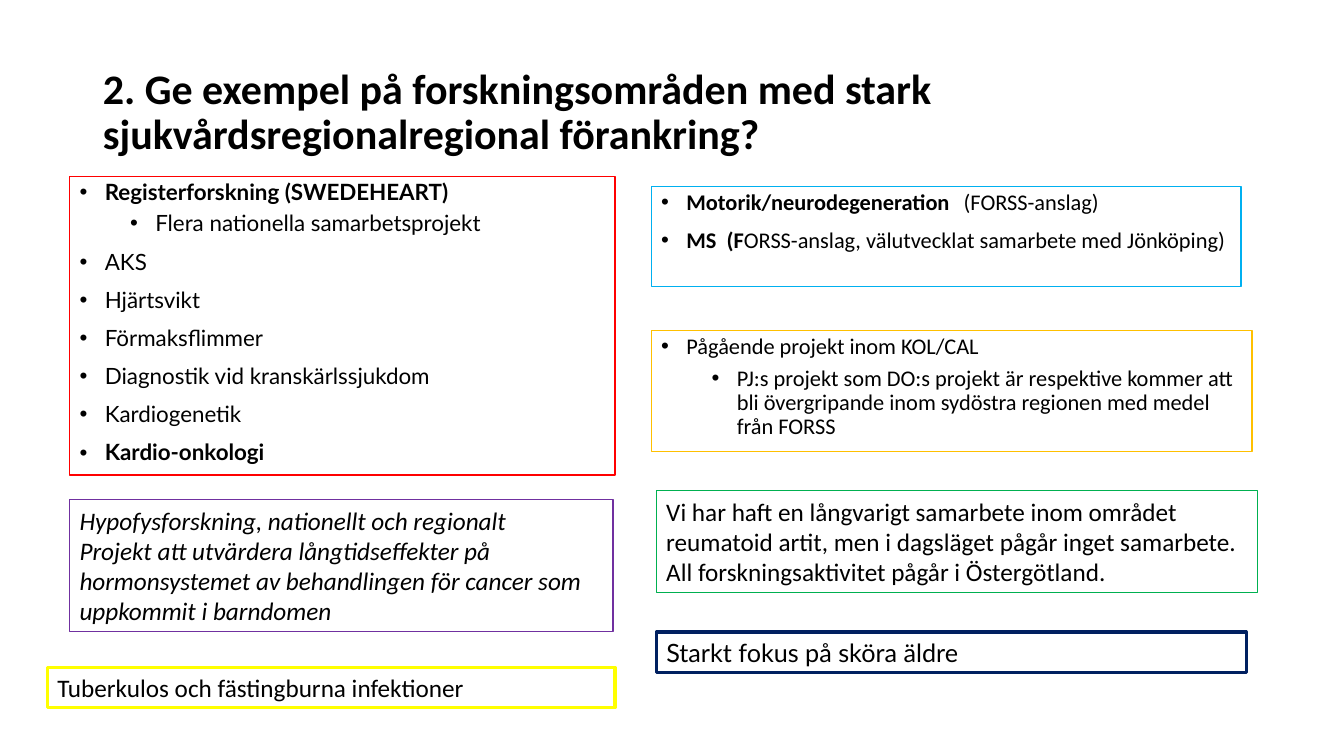
from lxml import etree
from pptx import Presentation
from pptx.dml.color import RGBColor
from pptx.enum.text import MSO_ANCHOR, MSO_AUTO_SIZE, PP_ALIGN
from pptx.oxml.ns import qn
from pptx.util import Inches, Pt

LEFT = PP_ALIGN.LEFT
TOP = MSO_ANCHOR.TOP
MIDDLE = MSO_ANCHOR.MIDDLE
FIXED = MSO_AUTO_SIZE.NONE
GROW = MSO_AUTO_SIZE.SHAPE_TO_FIT_TEXT
TITLE_AND_CONTENT = 1

HEART_ITEMS = [
    (0, [("Registerforskning (SWEDEHEART)", "b")]),
    (1, [("Flera nationella samarbetsprojekt", "")]),
    (0, [("AKS", "")]),
    (0, [("Hjärtsvikt", "")]),
    (0, [("Förmaksflimmer", "")]),
    (0, [("Diagnostik vid kranskärlssjukdom", "")]),
    (0, [("Kardiogenetik", "")]),
    (0, [("Kardio-onkologi", "b")]),
]
NEUROLOGY_ITEMS = [
    (0, [("Motorik/neurodegeneration ", "b"), ("\t(FORSS-anslag)", "")]),
    (0, [("MS  (F", "b"),
         ("ORSS-anslag, välutvecklat samarbete med Jönköping)", "")]),
]
LUNG_ITEMS = [
    (0, [("Pågående projekt inom KOL/CAL", "")]),
    (1, [("PJ:s projekt som DO:s projekt är respektive kommer att bli "
          "övergripande inom sydöstra regionen med medel från FORSS", "")]),
]
RHEUMATOLOGY = [
    "Vi har haft en långvarigt samarbete inom området reumatoid artit, "
    "men i dagsläget pågår inget samarbete. "
    "All forskningsaktivitet pågår i Östergötland.",
]
PITUITARY = [
    "Hypofysforskning, nationellt och regionalt",
    "Projekt att utvärdera långtidseffekter på hormonsystemet av "
    "behandlingen för cancer som uppkommit i barndomen",
]


def color(hex_value):
    """Return the colour for a hex string."""
    return RGBColor.from_string(hex_value)


def place(shape, left, top, width, height):
    """Move and size a shape, in inches."""
    shape.left, shape.top = Inches(left), Inches(top)
    shape.width, shape.height = Inches(width), Inches(height)


def outline(shape, hex_value, points):
    """Give a shape a coloured outline and no fill."""
    shape.fill.background()
    shape.line.color.rgb = color(hex_value)
    shape.line.width = Pt(points)


def prepare_frame(shape, anchor, auto_size):
    """Set wrapping, anchor and sizing of a shape's text."""
    frame = shape.text_frame
    frame.word_wrap = True
    frame.vertical_anchor = anchor
    frame.auto_size = auto_size
    return frame


def paragraph_at(frame, index):
    """Return the first paragraph of a frame, or a new one after it."""
    paragraph = frame.paragraphs[0] if index == 0 else frame.add_paragraph()
    paragraph.alignment = LEFT
    return paragraph


def add_run(paragraph, text, font_name, size, style=""):
    """Add a black run; the style letters are b for bold, i for italic."""
    run = paragraph.add_run()
    run.text = text
    run.font.name = font_name
    run.font.size = Pt(size)
    run.font.color.rgb = color("000000")
    run.font.bold = "b" in style
    run.font.italic = "i" in style


def set_bullet(paragraph, level):
    """Give a paragraph a hanging bullet for its level."""
    paragraph.level = level
    properties = paragraph._p.get_or_add_pPr()
    properties.set("marL", str(Inches(0.25 + 0.5 * level)))
    properties.set("indent", str(Inches(-0.25)))
    etree.SubElement(properties, qn("a:buFont"), typeface="Arial")
    etree.SubElement(properties, qn("a:buChar"), char="•")


def fill_bullets(shape, items, font_name):
    """Write a two-level bulleted list into a shape."""
    frame = prepare_frame(shape, TOP, FIXED)
    for index, (level, runs) in enumerate(items):
        paragraph = paragraph_at(frame, index)
        paragraph.line_spacing = 0.9
        paragraph.space_before = Pt(5 if level else 10)
        set_bullet(paragraph, level)
        for text, style in runs:
            add_run(paragraph, text, font_name, 16, style)


def add_box(slide, place_at, line):
    """Add an outlined text box."""
    box = slide.shapes.add_textbox(*(Inches(value) for value in place_at))
    outline(box, *line)
    return box


def add_note(slide, place_at, line, texts, font_name="Calibri", style=""):
    """Add an outlined box with plain paragraphs."""
    box = add_box(slide, place_at, line)
    frame = prepare_frame(box, TOP, GROW)
    for index, text in enumerate(texts):
        add_run(paragraph_at(frame, index), text, font_name, 18, style)


def set_title(slide, text):
    """Place and write the slide title."""
    title = slide.shapes.title
    place(title, 0.92, 0.4, 11.5, 1.45)
    paragraph = paragraph_at(prepare_frame(title, MIDDLE, FIXED), 0)
    paragraph.line_spacing = 0.9
    add_run(paragraph, text, "Calibri", 30, "b")


def main():
    """Build the slide and save it."""
    presentation = Presentation()
    presentation.slide_width = Inches(13.33)
    presentation.slide_height = Inches(7.5)
    layout = presentation.slide_layouts[TITLE_AND_CONTENT]
    slide = presentation.slides.add_slide(layout)

    set_title(slide, "2. Ge exempel på forskningsområden med stark "
                     "sjukvårdsregionalregional förankring?")

    heart = slide.placeholders[1]
    place(heart, 0.69, 1.75, 5.41, 2.96)
    outline(heart, "FF0000", 1.25)
    fill_bullets(heart, HEART_ITEMS, "Lato")

    neurology = add_box(slide, (6.46, 1.85, 5.85, 0.99), ("00B0F0", 1))
    fill_bullets(neurology, NEUROLOGY_ITEMS, "Calibri")
    lung = add_box(slide, (6.46, 3.28, 5.96, 1.2), ("FFC000", 1))
    fill_bullets(lung, LUNG_ITEMS, "Calibri")

    add_note(slide, (6.51, 4.87, 5.96, 1.01), ("00B050", 0.75), RHEUMATOLOGY)
    add_note(slide, (0.69, 4.96, 5.39, 1.31), ("7030A0", 0.75), PITUITARY,
             style="i")
    add_note(slide, (6.51, 6.27, 5.85, 0.4), ("002060", 2.25),
             ["Starkt fokus på sköra äldre"], font_name="Lato")
    add_note(slide, (0.47, 6.62, 5.63, 0.4), ("FFFF00", 2.25),
             ["Tuberkulos och fästingburna infektioner"])

    presentation.save("out.pptx")


if __name__ == "__main__":
    main()
